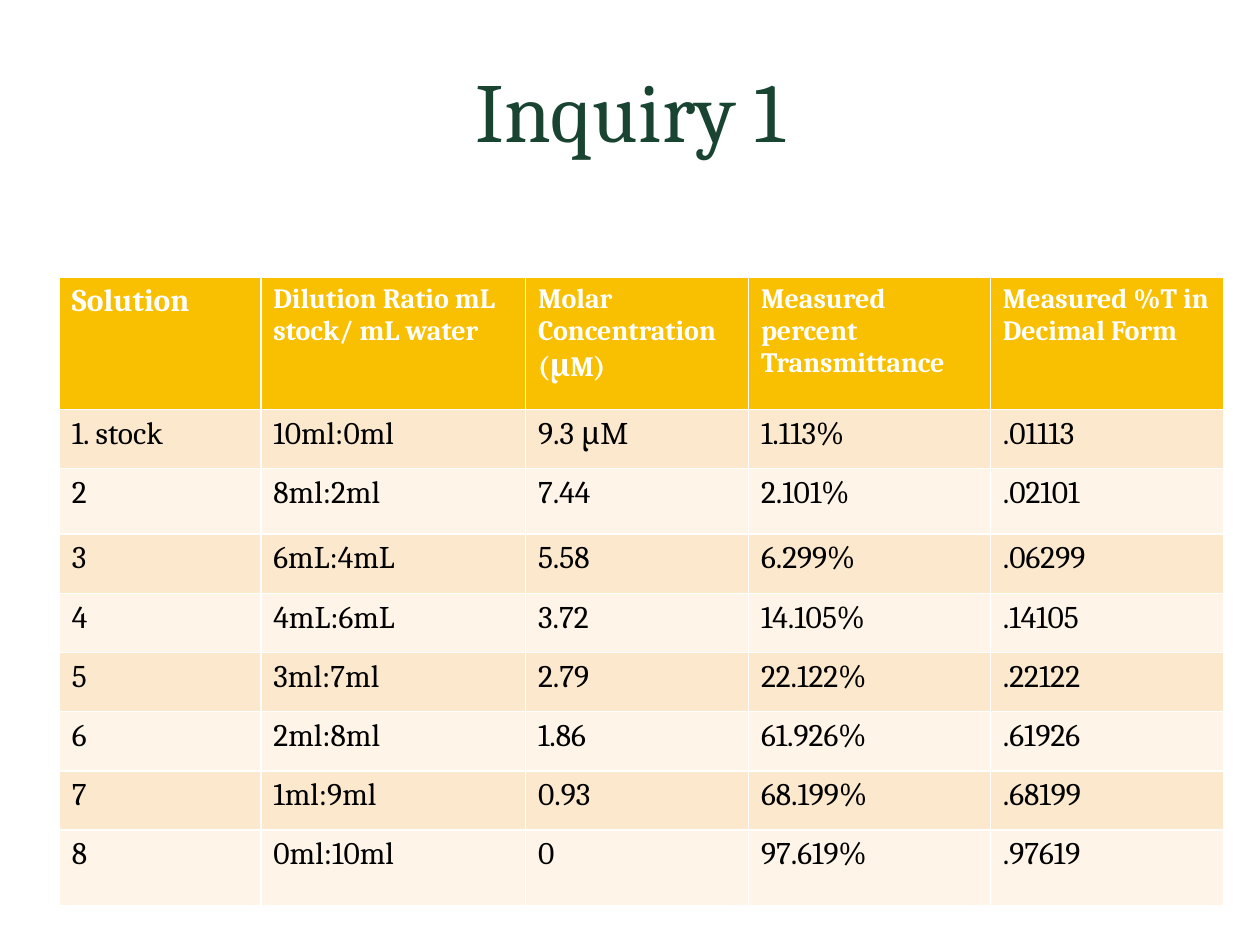
from pptx import Presentation
from pptx.dml.color import RGBColor
from pptx.enum.text import MSO_ANCHOR, PP_ALIGN
from pptx.util import Inches, Pt

CENTER, MIDDLE = PP_ALIGN.CENTER, MSO_ANCHOR.MIDDLE
GREEN = RGBColor(0x19, 0x44, 0x31)
GOLD = RGBColor(0xF8, 0xC0, 0x00)
BANDS = [RGBColor(0xFE, 0xF4, 0xE7), RGBColor(0xFC, 0xE8, 0xCC)]
WHITE = RGBColor(0xFF, 0xFF, 0xFF)
BLACK = RGBColor(0x00, 0x00, 0x00)

TITLE = "Inquiry 1"
HEADER = [
    [("Solution", 18)],
    [("Dilution Ratio mL stock/ mL water", 16)],
    [("Molar Concentration (", 16), ("μ", 18), ("M)", 16)],
    [("Measured percent Transmittance", 16)],
    [("Measured %T in Decimal Form", 16)],
]
ROWS = [
    ("1. stock", "10ml:0ml", "9.3 μM", "1.113%", ".01113"),
    ("2", "8ml:2ml", "7.44", "2.101%", ".02101"),
    ("3", "6mL:4mL", "5.58", "6.299%", ".06299"),
    ("4", "4mL:6mL", "3.72", "14.105%", ".14105"),
    ("5", "3ml:7ml", "2.79", "22.122%", ".22122"),
    ("6", "2ml:8ml", "1.86", "61.926%", ".61926"),
    ("7", "1ml:9ml", "0.93", "68.199%", ".68199"),
    ("8", "0ml:10ml", "0", "97.619%", ".97619"),
]
COL_WIDTHS = [1.6, 2.1, 1.77, 1.92, 1.85]
ROW_HEIGHTS = [1.05, 0.47, 0.52, 0.47, 0.47, 0.47, 0.47, 0.47, 0.6]


def add_run(p, text, size, color, bold=False):
    r = p.add_run()
    r.text = text
    r.font.color.rgb = color
    for name, value in {"name": "Cambria", "size": Pt(size), "bold": bold}.items():
        setattr(r.font, name, value)


def fill_cell(cell, runs, fill, color, bold):
    cell.fill.solid()
    cell.fill.fore_color.rgb = fill
    for text, size in runs:
        add_run(cell.text_frame.paragraphs[0], text, size, color, bold)


prs = Presentation()
prs.slide_width, prs.slide_height = Inches(10), Inches(7.5)
s = prs.slides.add_slide(prs.slide_layouts[5])

title = s.shapes.title
title.left, title.top = Inches(0.84), Inches(0.09)
title.width, title.height = Inches(8.32), Inches(1.55)
tf = title.text_frame
tf.vertical_anchor = MIDDLE
p = tf.paragraphs[0]
p.alignment = CENTER
add_run(p, TITLE, 48, GREEN)

table = s.shapes.add_table(
    len(ROW_HEIGHTS), len(COL_WIDTHS), Inches(0.47), Inches(2.2),
    Inches(sum(COL_WIDTHS)), Inches(sum(ROW_HEIGHTS))).table
for column, width in zip(table.columns, COL_WIDTHS):
    column.width = Inches(width)
for row, height in zip(table.rows, ROW_HEIGHTS):
    row.height = Inches(height)

for j, runs in enumerate(HEADER):
    fill_cell(table.cell(0, j), runs, GOLD, WHITE, True)
for i, values in enumerate(ROWS, 1):
    for j, value in enumerate(values):
        fill_cell(table.cell(i, j), [(value, 18)], BANDS[i % 2], BLACK, False)

prs.save("out.pptx")
